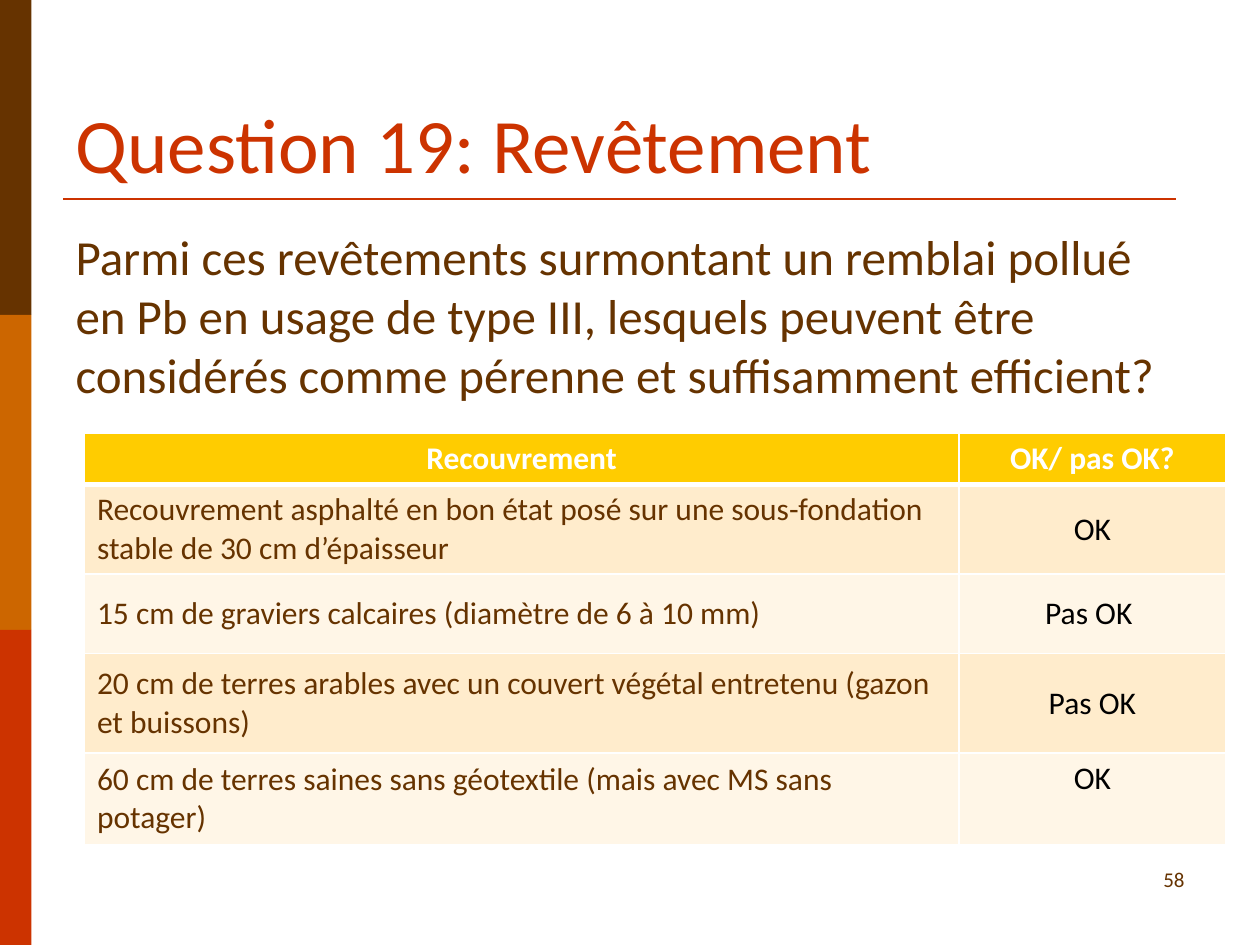
import pptx
import pptx.util
import pptx.dml.color
import pptx.enum.shapes
import pptx.enum.text
import pptx.oxml
import pptx.oxml.ns
from pptx.util import Inches

BROWN, ORANGE, RED = "663300", "CC6600", "CC3300"
GOLD, DARK_BAND, LIGHT_BAND = "FFCC00", "FFECCC", "FFF6E7"
WHITE, BLACK = "FFFFFF", "000000"
ALIGN = pptx.enum.text.PP_ALIGN
ANCHOR = pptx.enum.text.MSO_ANCHOR

ROWS = [
    ("Recouvrement", "OK/ pas OK?"),
    ("Recouvrement asphalté en bon état posé sur une sous-fondation stable de 30 cm d’épaisseur", "OK"),
    ("15 cm de graviers calcaires (diamètre de 6 à 10 mm)", "Pas OK "),
    ("20 cm de terres arables avec un couvert végétal entretenu (gazon et buissons)", "Pas OK"),
    ("60 cm de terres saines sans géotextile (mais avec MS sans potager)", "OK"),
]
ROW_HEIGHTS = [0.4, 0.7, 0.63, 0.79, 0.73]
COLUMN_WIDTHS = [6.94, 2.12]


def paint(colour_format, colour):
    """Set a fill, line or font colour from a hex string."""
    colour_format.rgb = pptx.dml.color.RGBColor.from_string(colour)


def fill_solid(item, colour):
    """Give a shape or cell a solid fill."""
    item.fill.solid()
    paint(item.fill.fore_color, colour)


def write(frame, text, size, colour, align=ALIGN.LEFT, bold=False):
    """Write one formatted run in the first paragraph of a text frame."""
    para = frame.paragraphs[0]
    para.alignment = align
    span = para.add_run()
    span.text = text
    span.font.name = "Calibri"
    span.font.size = pptx.util.Pt(size)
    span.font.bold = bold
    paint(span.font.color, colour)
    return para


def place(shape, left, top, width, height):
    """Move and size a shape."""
    shape.left, shape.top, shape.width, shape.height = left, top, width, height


def add_side_bands(page, left, top, width, height):
    """Stack three equal coloured bands in the given box."""
    colours = (BROWN, ORANGE, RED)
    step = height // len(colours)
    for index, colour in enumerate(colours):
        band = page.shapes.add_shape(
            pptx.enum.shapes.MSO_SHAPE.RECTANGLE, left, top + index * step, width, step)
        band.shadow.inherit = False
        fill_solid(band, colour)
        band.line.fill.background()


def add_title(page, left, top, width, height):
    """Place the title and the rule just beneath it."""
    title = page.shapes.title
    place(title, left, top, width, height)
    frame = title.text_frame
    frame.auto_size = pptx.enum.text.MSO_AUTO_SIZE.NONE
    frame.vertical_anchor = ANCHOR.BOTTOM
    write(frame, "Question 19: Revêtement", 44, RED)
    rule_top = top + height + Inches(0.03)
    rule = page.shapes.add_connector(
        pptx.enum.shapes.MSO_CONNECTOR.STRAIGHT,
        left, rule_top, left + Inches(8.83), rule_top)
    paint(rule.line.color, RED)
    rule.line.width = pptx.util.Pt(1.5)
    rule._element.spPr.append(pptx.oxml.parse_xml(
        f'<a:effectLst {pptx.oxml.ns.nsdecls("a")}/>'))


def add_question(page, left, top, width, height):
    """Place the question in the body placeholder without a bullet."""
    body = page.placeholders[1]
    place(body, left, top, width, height)
    frame = body.text_frame
    frame.auto_size = pptx.enum.text.MSO_AUTO_SIZE.NONE
    para = write(
        frame,
        "Parmi ces revêtements surmontant un remblai pollué en Pb en usage de type III, "
        "lesquels peuvent être considérés comme pérenne et suffisamment efficient?",
        28, BROWN)
    properties = para._p.get_or_add_pPr()
    properties.set("marL", "0")
    properties.set("indent", "0")
    properties.append(pptx.oxml.parse_xml(
        f'<a:buNone {pptx.oxml.ns.nsdecls("a")}/>'))


def add_borders(cell, bottom_width):
    """Draw white cell borders, with a chosen width in points at the bottom."""
    properties = cell._tc.get_or_add_tcPr()
    for index, (side, width) in enumerate(
            (("L", 1), ("R", 1), ("T", 1), ("B", bottom_width))):
        properties.insert(index, pptx.oxml.parse_xml(
            f'<a:ln{side} {pptx.oxml.ns.nsdecls("a")} w="{pptx.util.Pt(width)}">'
            f'<a:solidFill><a:srgbClr val="{WHITE}"/></a:solidFill></a:ln{side}>'))


def add_answers(page, left, top, width, height):
    """Build the table of coverings and answers."""
    table = page.shapes.add_table(
        len(ROWS), len(COLUMN_WIDTHS), left, top, width, height).table
    for column, column_width in zip(table.columns, COLUMN_WIDTHS):
        column.width = Inches(column_width)
    for row_index, texts in enumerate(ROWS):
        table.rows[row_index].height = Inches(ROW_HEIGHTS[row_index])
        header = row_index == 0
        band = GOLD if header else (LIGHT_BAND, DARK_BAND)[row_index % 2]
        for column_index, text in enumerate(texts):
            cell = table.cell(row_index, column_index)
            fill_solid(cell, band)
            add_borders(cell, 3 if header else 1)
            cell.vertical_anchor = ANCHOR.MIDDLE
            colour = WHITE if header else (BROWN, BLACK)[column_index]
            align = ALIGN.CENTER if header or column_index else ALIGN.LEFT
            write(cell.text_frame, text, 18, colour, align, header)
    table.cell(len(ROWS) - 1, 1).vertical_anchor = ANCHOR.TOP


def add_page_number(page, left, top, width, height):
    """Place the page number at the right of its box."""
    box = page.shapes.add_textbox(left, top, width, height)
    box.text_frame.word_wrap = True
    write(box.text_frame, "58", 12, BROWN, ALIGN.RIGHT)


def main():
    """Build and save the deck."""
    deck = pptx.Presentation()
    deck.slide_width, deck.slide_height = Inches(10), Inches(7.5)
    page = deck.slides.add_slide(deck.slide_layouts[1])
    add_side_bands(page, 0, 0, Inches(0.25), deck.slide_height)
    add_title(page, Inches(0.5), Inches(0.3), Inches(9), Inches(1.25))
    add_question(page, Inches(0.5), Inches(1.75), Inches(9), Inches(4.95))
    add_answers(page, Inches(0.67), Inches(3.44),
                Inches(sum(COLUMN_WIDTHS)), Inches(sum(ROW_HEIGHTS)))
    add_page_number(page, Inches(8.47), Inches(6.83), Inches(1.03), Inches(0.5))
    deck.save("out.pptx")


if __name__ == "__main__":
    main()
